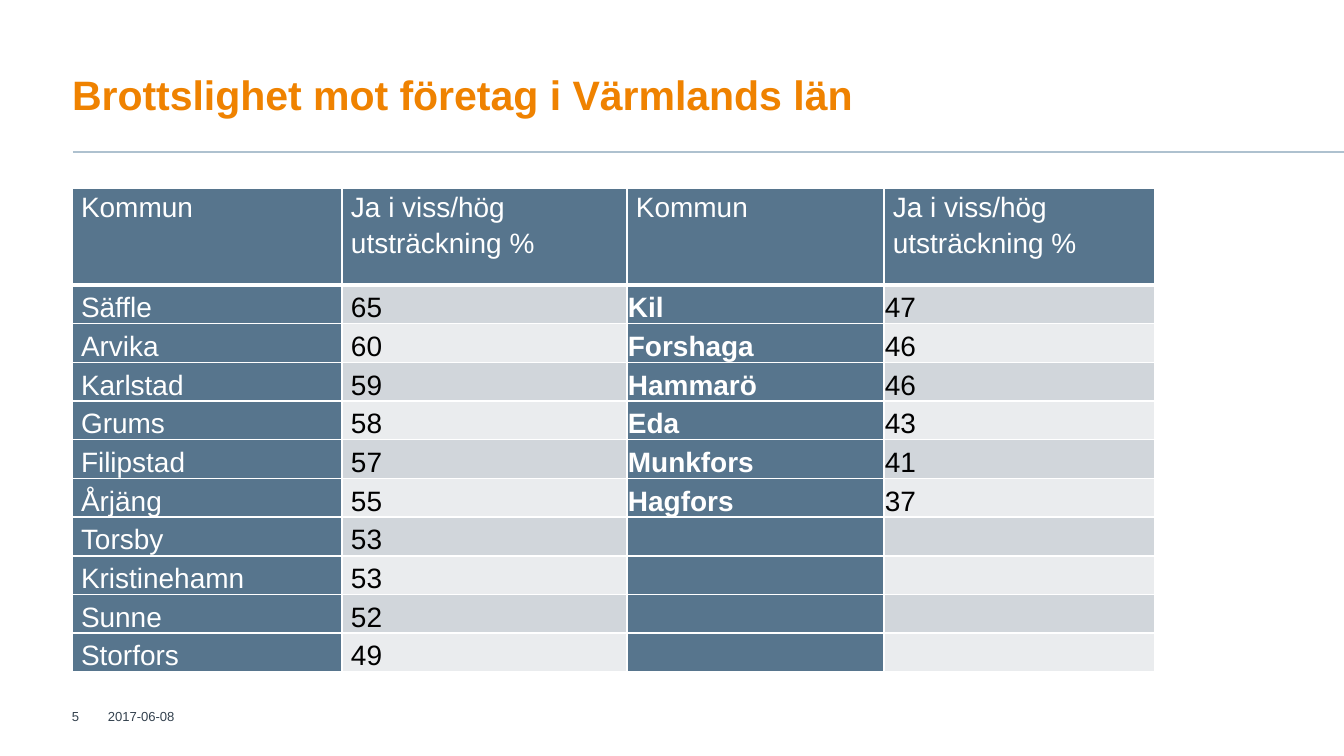
from itertools import zip_longest

from lxml.etree import SubElement
from pptx import Presentation
from pptx.dml.color import RGBColor
from pptx.enum.shapes import MSO_CONNECTOR
from pptx.enum.text import MSO_ANCHOR
from pptx.oxml.ns import qn
from pptx.util import Pt

EMU_PER_PX = 914400 / 134.4

ORANGE = RGBColor(0xEF, 0x82, 0x00)
RULE_BLUE = RGBColor(0xAE, 0xC1, 0xCF)
STEEL = RGBColor(0x57, 0x75, 0x8D)
BAND_DARK = RGBColor(0xD1, 0xD6, 0xDB)
BAND_LIGHT = RGBColor(0xEA, 0xEC, 0xEE)
FOOTER_GREY = RGBColor(0x33, 0x41, 0x4E)
WHITE = RGBColor(0xFF, 0xFF, 0xFF)
BLACK = RGBColor(0x00, 0x00, 0x00)

TITLE_FONT = {"name": "Arial", "size": Pt(22), "bold": True}
TABLE_FONT = {"name": "Arial", "size": Pt(15), "bold": False}
FOOTER_FONT = {"name": "Arial", "size": Pt(7), "bold": False}

HEADINGS = ["Kommun", "Ja i viss/hög utsträckning %"] * 2
LEFT_ROWS = [
    ("Säffle", "65"), ("Arvika", "60"), ("Karlstad", "59"), ("Grums", "58"),
    ("Filipstad", "57"), ("Årjäng", "55"), ("Torsby", "53"),
    ("Kristinehamn", "53"), ("Sunne", "52"), ("Storfors", "49"),
]
RIGHT_ROWS = [
    ("Kil", "47"), ("Forshaga", "46"), ("Hammarö", "46"),
    ("Eda", "43"), ("Munkfors", "41"), ("Hagfors", "37"),
]
COLUMN_WIDTHS = [270, 285, 257, 271]
HEADER_HEIGHT = 97


def px(length):
    return round(length * EMU_PER_PX)


def set_values(target, values):
    for name, value in values.items():
        setattr(target, name, value)


def margins(left, top, right, bottom):
    return {
        "margin_left": px(left), "margin_top": px(top),
        "margin_right": px(right), "margin_bottom": px(bottom),
    }


def add_text(slide, box, text, font, color, frame_values):
    shape = slide.shapes.add_textbox(*map(px, box))
    frame = shape.text_frame
    set_values(frame, {"word_wrap": True, **frame_values})
    run = frame.paragraphs[0].add_run()
    run.text = text
    set_values(run.font, font)
    run.font.color.rgb = color
    return frame.paragraphs[0]


def add_header(slide, box):
    left, top, width, height = box
    rule_top = top + height
    rule = slide.shapes.add_connector(
        MSO_CONNECTOR.STRAIGHT, px(left + 1), px(rule_top), px(left + width), px(rule_top))
    rule.line.color.rgb = RULE_BLUE
    rule.line.width = Pt(1)
    SubElement(rule._element.spPr, qn("a:effectLst"))
    title = add_text(
        slide, (left, top, 962, 90), "Brottslighet mot företag i Värmlands län",
        TITLE_FONT, ORANGE,
        {"vertical_anchor": MSO_ANCHOR.BOTTOM, **margins(0, 0, 13, 7)})
    title.line_spacing = 0.9


def set_borders(cell, bottom_width):
    properties = cell._tc.get_or_add_tcPr()
    widths = {"a:lnL": 1, "a:lnR": 1, "a:lnT": 1, "a:lnB": bottom_width}
    for position, (tag, width) in enumerate(widths.items()):
        line = SubElement(properties, qn(tag), w=str(Pt(width)))
        fill = SubElement(line, qn("a:solidFill"))
        SubElement(fill, qn("a:srgbClr"), val=str(WHITE))
        properties.insert(position, line)


def fill_cell(cell, text, fill, color, font, cell_values, spacing):
    set_values(cell, cell_values)
    cell.fill.solid()
    cell.fill.fore_color.rgb = fill
    paragraph = cell.text_frame.paragraphs[0]
    if not text:
        SubElement(paragraph._p, qn("a:endParaRPr"), sz="1500")
        return
    paragraph.line_spacing = spacing
    run = paragraph.add_run()
    run.text = text
    set_values(run.font, font)
    run.font.color.rgb = color


def add_crime_table(slide, box):
    height = box[3]
    body = [left + right for left, right in
            zip_longest(LEFT_ROWS, RIGHT_ROWS, fillvalue=("", ""))]
    shape = slide.shapes.add_table(len(body) + 1, len(HEADINGS), *map(px, box))
    table = shape.table
    table.horz_banding = False
    for column, width in zip(table.columns, COLUMN_WIDTHS):
        column.width = px(width)
    for row in table.rows:
        row.height = px((height - HEADER_HEIGHT) / len(body))
    table.rows[0].height = px(HEADER_HEIGHT)

    wide = margins(9, 0, 9, 0)
    tight = margins(1, 1, 1, 0)
    for row_index, texts in enumerate([HEADINGS] + body):
        is_header = row_index == 0
        band = BAND_DARK if row_index % 2 else BAND_LIGHT
        anchor = MSO_ANCHOR.TOP if is_header else MSO_ANCHOR.BOTTOM
        for column_index, text in enumerate(texts):
            is_name = column_index % 2 == 0
            is_tight = not is_header and column_index >= 2
            on_steel = is_header or is_name
            cell = table.cell(row_index, column_index)
            fill_cell(
                cell, text,
                STEEL if on_steel else band,
                WHITE if on_steel else BLACK,
                {**TABLE_FONT, "bold": is_tight and is_name},
                {"vertical_anchor": anchor, **(tight if is_tight else wide)},
                1.0 if is_tight else 1.15)
            set_borders(cell, 3 if is_header else 1)


def add_footer(slide, box):
    left, top, width, height = box
    number_width = 47
    date_left = left + number_width + 2
    parts = [
        ((date_left, top, left + width - date_left, height), "2017-06-08", margins(0, 7, 0, 7)),
        ((left, top, number_width, height), "5", margins(13, 7, 13, 7)),
    ]
    for part_box, text, insets in parts:
        add_text(slide, part_box, text, FOOTER_FONT, FOOTER_GREY,
                 {"vertical_anchor": MSO_ANCHOR.MIDDLE, **insets})


def main():
    presentation = Presentation()
    presentation.slide_width = px(1344)
    presentation.slide_height = px(756)
    slide = presentation.slides.add_slide(presentation.slide_layouts[6])
    add_header(slide, (72, 36, 1272, 116))
    add_crime_table(slide, (72, 188, sum(COLUMN_WIDTHS), 483))
    add_footer(slide, (59, 707, 130, 18))
    presentation.save("out.pptx")


if __name__ == "__main__":
    main()
